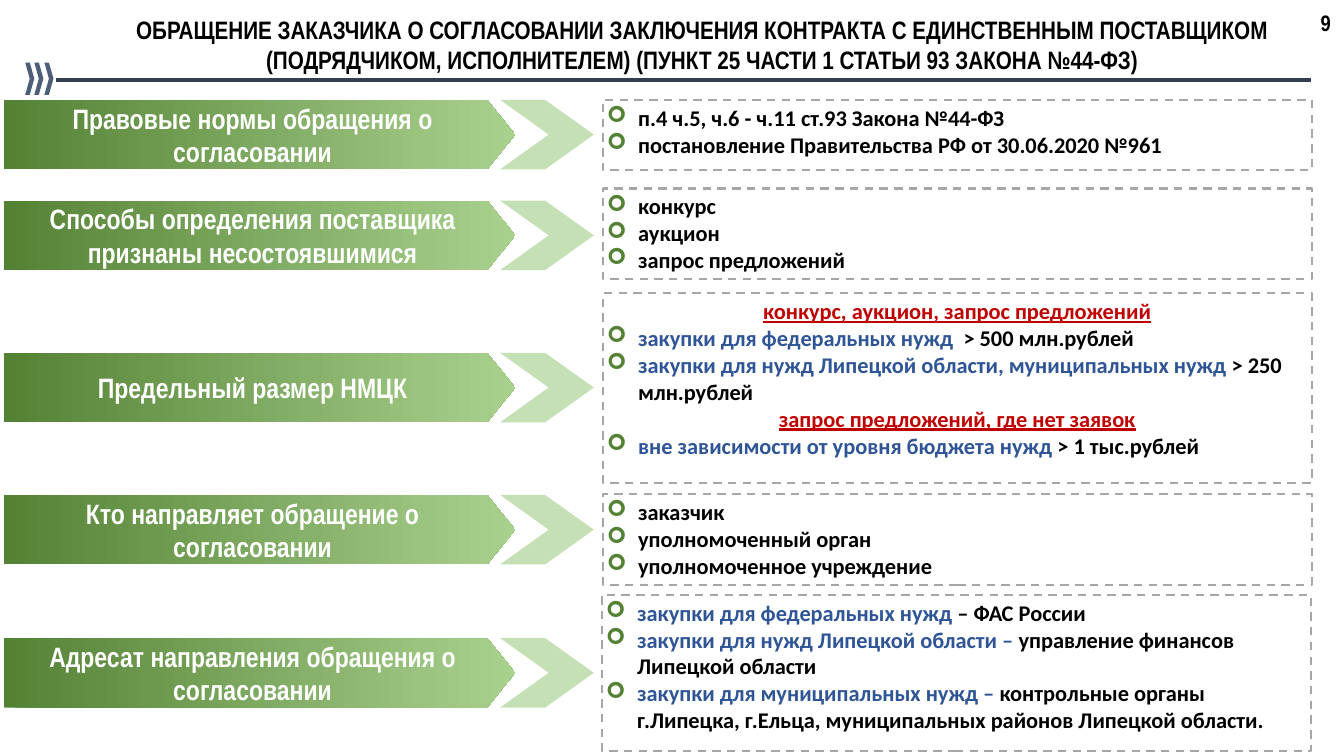
from lxml import etree
from pptx import Presentation
from pptx.dml.color import RGBColor
from pptx.enum.dml import MSO_LINE
from pptx.enum.shapes import MSO_CONNECTOR, MSO_SHAPE
from pptx.enum.text import MSO_ANCHOR, MSO_AUTO_SIZE, PP_ALIGN
from pptx.oxml.ns import qn
from pptx.util import Inches, Pt

BLACK = RGBColor(0x00, 0x00, 0x00)
WHITE = RGBColor(0xFF, 0xFF, 0xFF)
NAVY = RGBColor(0x33, 0x3F, 0x50)
SLATE = RGBColor(0x4C, 0x5E, 0x78)
GREY = RGBColor(0xA6, 0xA6, 0xA6)
GREEN = RGBColor(0x54, 0x82, 0x35)
LIGHT_GREEN = RGBColor(0xA9, 0xD1, 0x8E)
PALE_GREEN = RGBColor(0xC5, 0xE0, 0xB4)
BLUE = RGBColor(0x2F, 0x55, 0x97)
RED = RGBColor(0xC0, 0x00, 0x00)

# Label, label top, box left, box top, box height, lines.
# A line is a list of (text, colour) runs; a line in red is a centred subheading.
ROWS = [
    ("Правовые нормы обращения о согласовании", 0.99, 5.98, 0.99, 0.7, [
        [("п.4 ч.5, ч.6 - ч.11 ст.93 Закона №44-ФЗ", BLACK)],
        [("постановление Правительства РФ от 30.06.2020 №961", BLACK)],
    ]),
    ("Способы определения поставщика признаны несостоявшимися", 1.99, 5.98, 1.87, 0.9, [
        [("конкурс", BLACK)],
        [("аукцион", BLACK)],
        [("запрос предложений", BLACK)],
    ]),
    ("Предельный размер НМЦК", 3.5, 5.98, 2.91, 1.88, [
        [("конкурс, аукцион, запрос предложений", RED)],
        [("закупки для федеральных нужд ", BLUE), (" > 500 млн.рублей", BLACK)],
        [("закупки для нужд Липецкой области, муниципальных нужд ", BLUE),
         ("> 250 млн.рублей", BLACK)],
        [("запрос предложений, где нет заявок", RED)],
        [("вне зависимости от уровня бюджета нужд ", BLUE), ("> 1 тыс.рублей", BLACK)],
    ]),
    ("Кто направляет обращение о согласовании", 4.91, 5.98, 4.9, 0.9, [
        [("заказчик", BLACK)],
        [("уполномоченный орган", BLACK)],
        [("уполномоченное учреждение", BLACK)],
    ]),
    ("Адресат направления обращения о согласовании", 6.33, 5.97, 5.9, 1.55, [
        [("закупки для федеральных нужд ", BLUE), ("– ФАС России", BLACK)],
        [("закупки для нужд Липецкой области – ", BLUE),
         ("управление финансов Липецкой области", BLACK)],
        [("закупки для муниципальных нужд – ", BLUE),
         ("контрольные органы г.Липецка, г.Ельца, муниципальных районов "
          "Липецкой области.", BLACK)],
    ]),
]


def add_plain_shape(shapes, kind, left, top, width, height, color=None):
    """Add a shape without shadow or outline, with thin text margins."""
    shape = shapes.add_shape(kind, Inches(left), Inches(top), Inches(width), Inches(height))
    shape.shadow.inherit = False
    shape.line.fill.background()
    if color is None:
        shape.fill.background()
    else:
        shape.fill.solid()
        shape.fill.fore_color.rgb = color
    frame = shape.text_frame
    frame.word_wrap = True
    frame.margin_left = frame.margin_right = Inches(0.04)
    frame.margin_top = frame.margin_bottom = Inches(0.04)
    return shape


def style_run(run, font_name, size, color):
    run.font.name = font_name
    run.font.size = Pt(size)
    run.font.bold = True
    run.font.color.rgb = color


prs = Presentation()
prs.slide_width, prs.slide_height = Inches(13.33), Inches(7.5)
slide = prs.slides.add_slide(prs.slide_layouts[5])

# Heading
title = slide.shapes.title
title.left, title.top = Inches(0.94), Inches(0.09)
title.width, title.height = Inches(12.05), Inches(0.71)
title.text_frame.text = (
    "ОБРАЩЕНИЕ ЗАКАЗЧИКА О СОГЛАСОВАНИИ ЗАКЛЮЧЕНИЯ КОНТРАКТА С ЕДИНСТВЕННЫМ ПОСТАВЩИКОМ "
    "(ПОДРЯДЧИКОМ, ИСПОЛНИТЕЛЕМ) (ПУНКТ 25 ЧАСТИ 1 СТАТЬИ 93 ЗАКОНА №44-ФЗ)")
title.text_frame.auto_size = MSO_AUTO_SIZE.NONE
title.text_frame.vertical_anchor = MSO_ANCHOR.TOP
title.text_frame.paragraphs[0].alignment = PP_ALIGN.CENTER
style_run(title.text_frame.paragraphs[0].runs[0], "Arial Narrow", 18, BLACK)

page_number = slide.shapes.add_textbox(Inches(13), Inches(0.04), Inches(0.3), Inches(0.36))
page_number.text_frame.text = "9"
style_run(page_number.text_frame.paragraphs[0].runs[0], "Arial Narrow", 16, BLACK)

rule = slide.shapes.add_connector(
    MSO_CONNECTOR.STRAIGHT, Inches(0.56), Inches(0.79), Inches(13), Inches(0.79))
rule.line.color.rgb = NAVY
rule.line.width = Pt(2.75)
etree.SubElement(rule._element.spPr, qn("a:effectLst"))

for left in (0.44, 0.34, 0.25):
    add_plain_shape(slide.shapes, MSO_SHAPE.CHEVRON, left, 0.62, 0.09, 0.32, SLATE)

# Rows: green label, pale chevron, dashed box
for label, label_top, box_left, box_top, box_height, lines in ROWS:
    arrow = slide.shapes.add_group_shape()
    banner = add_plain_shape(arrow.shapes, MSO_SHAPE.PENTAGON, 0.04, label_top, 5.07, 0.69)
    banner.adjustments[0] = 0.403
    banner.fill.gradient()
    banner.fill.gradient_angle = 0
    for stop, position, color in zip(banner.fill.gradient_stops, (0, 1), (GREEN, LIGHT_GREEN)):
        stop.position = position
        stop.color.rgb = color
    banner.text_frame.text = label
    banner.text_frame.vertical_anchor = MSO_ANCHOR.MIDDLE
    banner.text_frame.paragraphs[0].alignment = PP_ALIGN.CENTER
    style_run(banner.text_frame.paragraphs[0].runs[0], "Arial Narrow", 20, WHITE)

    chevron = add_plain_shape(
        arrow.shapes, MSO_SHAPE.CHEVRON, 4.96, label_top, 0.93, 0.69, PALE_GREEN)
    chevron.adjustments[0] = 0.7

    box = add_plain_shape(
        slide.shapes, MSO_SHAPE.RECTANGLE, box_left, box_top, 7.03, box_height)
    box.line.color.rgb = GREY
    box.line.width = Pt(1.5)
    box.line.dash_style = MSO_LINE.DASH
    box.text_frame.vertical_anchor = MSO_ANCHOR.TOP
    for index, runs in enumerate(lines):
        if index == 0:
            paragraph = box.text_frame.paragraphs[0]
        else:
            paragraph = box.text_frame.add_paragraph()
        is_subheading = runs[0][1] == RED
        for text, color in runs:
            run = paragraph.add_run()
            run.text = text
            style_run(run, "Calibri", 16, color)
            run.font.underline = is_subheading
        if is_subheading:
            paragraph.alignment = PP_ALIGN.CENTER
            continue
        paragraph.alignment = PP_ALIGN.LEFT
        properties = paragraph._p.get_or_add_pPr()
        properties.set("marL", str(Inches(0.31)))
        properties.set("indent", str(-Inches(0.31)))
        bullet_color = etree.SubElement(properties, qn("a:buClr"))
        etree.SubElement(bullet_color, qn("a:srgbClr"), val=str(GREEN))
        etree.SubElement(properties, qn("a:buFont"), typeface="Wingdings")
        etree.SubElement(properties, qn("a:buChar"), char="➢")

prs.save("out.pptx")
